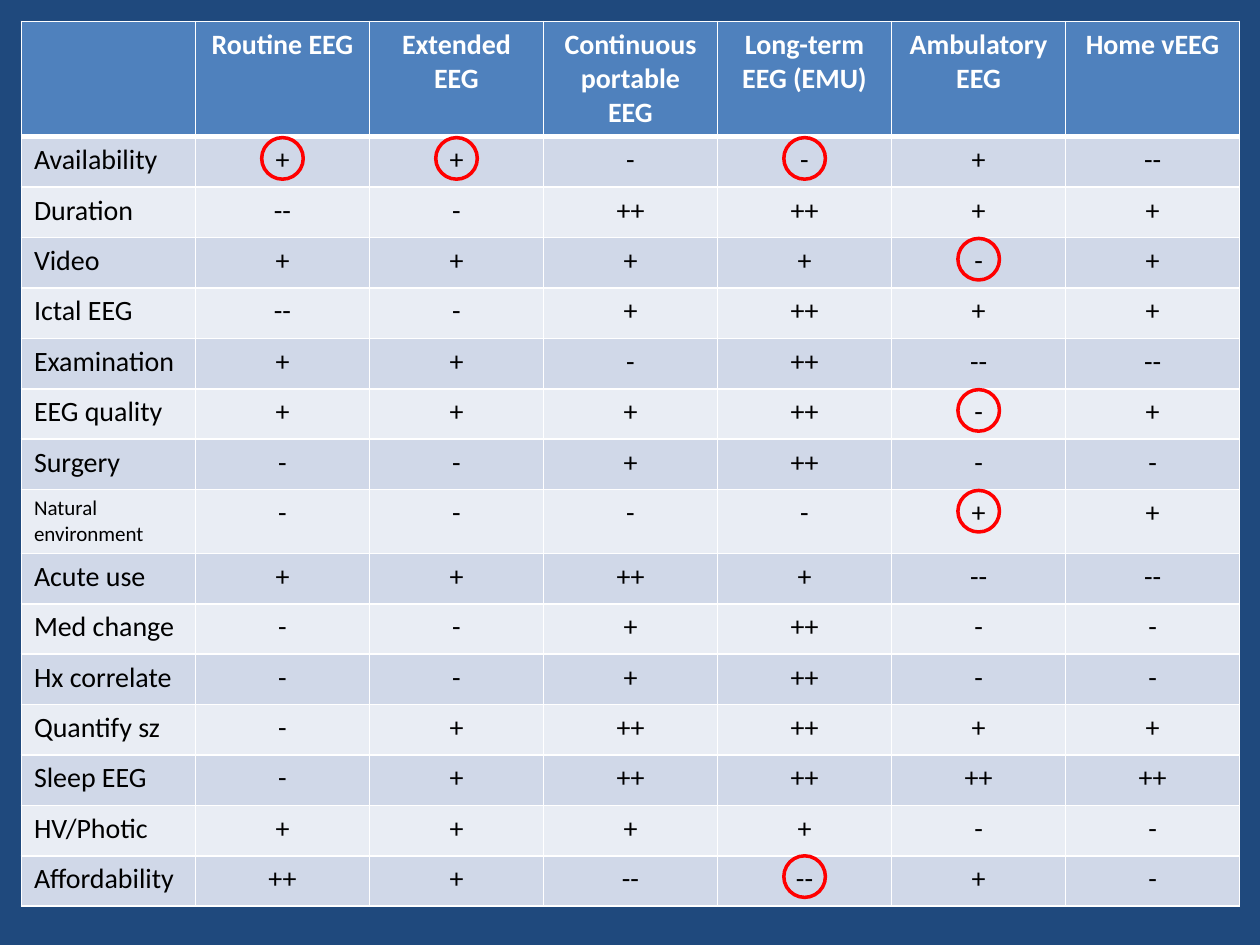
import pptx
import pptx.util
import pptx.dml.color
import pptx.enum.shapes
import pptx.enum.text
import pptx.oxml
import pptx.oxml.ns
from lxml import etree

Pt = pptx.util.Pt
RGB = pptx.dml.color.RGBColor.from_string
ALIGN = pptx.enum.text.PP_ALIGN

# Content
HEADERS = ["", "Routine EEG", "Extended EEG", "Continuous portable EEG",
           "Long-term EEG (EMU)", "Ambulatory EEG", "Home vEEG"]
RATINGS = [
    ("Availability", "+ + - - + --"),
    ("Duration", "-- - ++ ++ + +"),
    ("Video", "+ + + + - +"),
    ("Ictal EEG", "-- - + ++ + +"),
    ("Examination", "+ + - ++ -- --"),
    ("EEG quality", "+ + + ++ - +"),
    ("Surgery", "- - + ++ - -"),
    ("Natural environment", "- - - - + +"),
    ("Acute use", "+ + ++ + -- --"),
    ("Med change", "- - + ++ - -"),
    ("Hx correlate", "- - + ++ - -"),
    ("Quantify sz", "- + ++ ++ + +"),
    ("Sleep EEG", "- + ++ ++ ++ ++"),
    ("HV/Photic", "+ + + + - -"),
    ("Affordability", "++ + -- -- + -"),
]
SMALL_LABEL = "Natural environment"
CIRCLED = [
    ("Affordability", "Long-term EEG (EMU)"),
    ("Video", "Ambulatory EEG"),
    ("Natural environment", "Ambulatory EEG"),
    ("EEG quality", "Ambulatory EEG"),
    ("Availability", "Extended EEG"),
    ("Availability", "Routine EEG"),
    ("Availability", "Long-term EEG (EMU)"),
]

THEME = {
    "background": "1F497D", "header": "4F81BD", "bands": ("D0D8E8", "E9EDF4"),
    "border": "FFFFFF", "header_text": "FFFFFF", "text": "000000",
    "circle": "FF0000", "font": "Calibri", "size": 16, "small": 12,
}

# Layout, in points
LEFT, TOP, WIDTH = 12.24, 12.24, 696.24
HEADER_H, ROW_H, SMALL_ROW_H = 64.8, 28.8, 36
COL_W = WIDTH / len(HEADERS)
CIRCLE_D, MARK_DROP = 23.76, 13.5

labels = [label for label, _ in RATINGS]
heights = [HEADER_H] + [SMALL_ROW_H if x == SMALL_LABEL else ROW_H for x in labels]


def set_borders(cell, widths):
    tcPr = cell._tc.get_or_add_tcPr()
    for side, width in widths.items():
        ln = etree.SubElement(tcPr, pptx.oxml.ns.qn(f"a:ln{side}"), w=str(Pt(width)))
        fill = etree.SubElement(ln, pptx.oxml.ns.qn("a:solidFill"))
        etree.SubElement(fill, pptx.oxml.ns.qn("a:srgbClr"), val=THEME["border"])


def fill_cell(cell, text, fill, align, color, font):
    cell.fill.solid()
    cell.fill.fore_color.rgb = RGB(fill)
    p = cell.text_frame.paragraphs[0]
    p.alignment = align
    if not text:
        return
    r = p.add_run()
    r.text = text
    r.font.color.rgb = RGB(color)
    for name, value in font.items():
        setattr(r.font, name, value)


def add_ratings_table(s):
    rows = [HEADERS] + [[label] + marks.split() for label, marks in RATINGS]
    table = s.shapes.add_table(len(rows), len(HEADERS), Pt(LEFT), Pt(TOP),
                               Pt(WIDTH), Pt(sum(heights))).table
    for col in table.columns:
        col.width = Pt(COL_W)
    for i, row in enumerate(rows):
        table.rows[i].height = Pt(heights[i])
        head = i == 0
        for j, text in enumerate(row):
            cell = table.cell(i, j)
            # A thick rule separates the header from the body
            set_borders(cell, {"L": 1, "R": 1, "T": 3 if i == 1 else 1,
                               "B": 3 if head else 1})
            size = THEME["small"] if text == SMALL_LABEL else THEME["size"]
            fill_cell(cell, text,
                      THEME["header"] if head else THEME["bands"][(i - 1) % 2],
                      ALIGN.CENTER if head or j else ALIGN.LEFT,
                      THEME["header_text"] if head else THEME["text"],
                      {"name": THEME["font"], "size": Pt(size), "bold": head})


def add_circle(s, label, header):
    x = LEFT + COL_W * (HEADERS.index(header) + 0.5)
    y = TOP + sum(heights[:labels.index(label) + 1]) + MARK_DROP
    sp = s.shapes.add_shape(pptx.enum.shapes.MSO_SHAPE.OVAL,
                            Pt(x - CIRCLE_D / 2), Pt(y - CIRCLE_D / 2),
                            Pt(CIRCLE_D), Pt(CIRCLE_D))
    sp.shadow.inherit = False
    sp.fill.background()
    sp.line.color.rgb = RGB(THEME["circle"])
    sp.line.width = Pt(2)


def main():
    prs = pptx.Presentation()
    prs.slide_width, prs.slide_height = Pt(720), Pt(540)
    s = prs.slides.add_slide(prs.slide_layouts[6])
    s.background.fill.solid()
    s.background.fill.fore_color.rgb = RGB(THEME["background"])
    add_ratings_table(s)
    # Rings around the marks to point out
    for label, header in CIRCLED:
        add_circle(s, label, header)
    prs.save("out.pptx")


if __name__ == "__main__":
    main()
